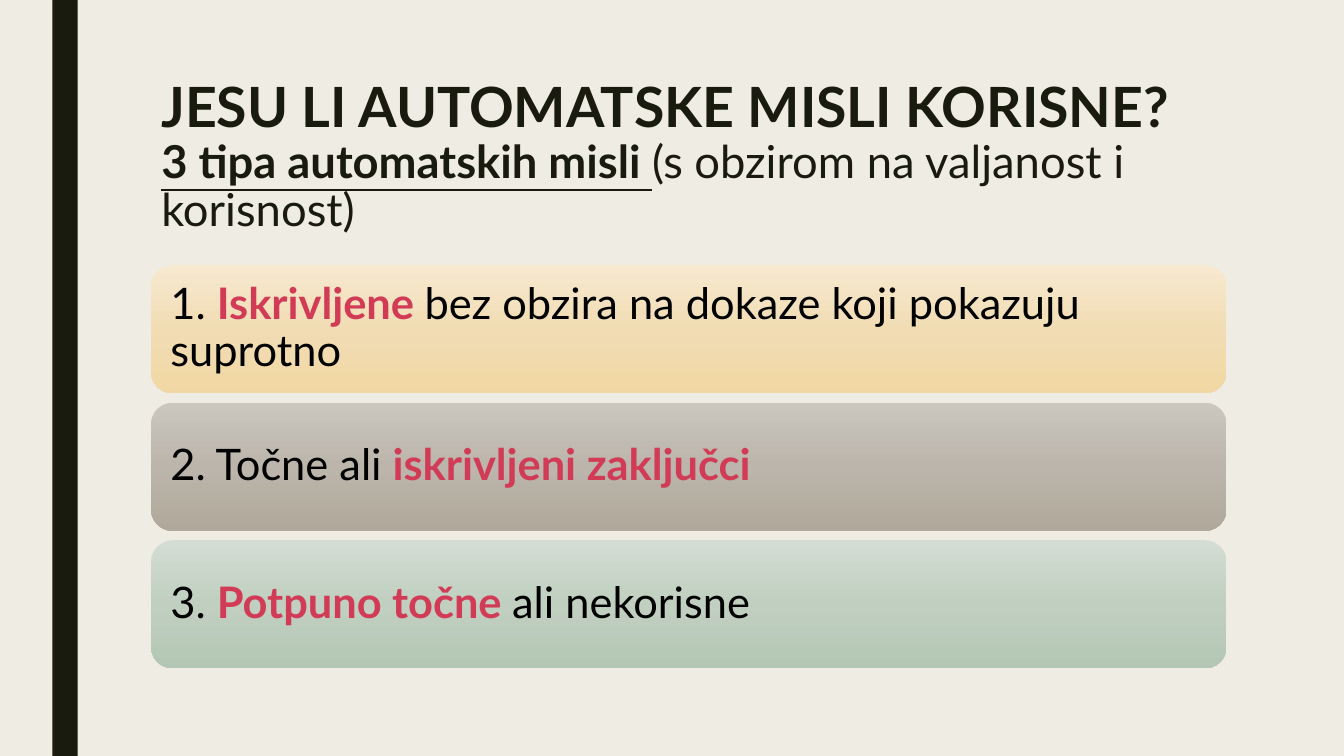
from copy import deepcopy

from pptx import Presentation
from pptx.dml.color import RGBColor
from pptx.enum import shapes, text
from pptx.util import Cm, Pt

FONT = "Lato"
BACKGROUND = RGBColor(0xEF, 0xED, 0xE3)
DARK = RGBColor(0x19, 0x1B, 0x0E)
BLACK = RGBColor(0x00, 0x00, 0x00)
ACCENT = RGBColor(0xD1, 0x3B, 0x56)

# Each thought type: gradient from top to bottom, then (wording, is emphasised).
THOUGHT_TYPES = [
    (("F7E9D0", "F1DCB4", "F1D7A3"),
     [("1. ", False), ("Iskrivljene ", True),
      ("bez obzira na dokaze koji pokazuju suprotno", False)]),
    (("CBC7BF", "BBB5AB", "B0A89A"),
     [("2. Točne ali ", False), ("iskrivljeni zaključci", True)]),
    (("D3DDD3", "C0CFC0", "B4C7B5"),
     [("3. ", False), ("Potpuno točne ", True), ("ali nekorisne", False)]),
]


def add_text(paragraph, wording, size, color=DARK, bold=False, underline=False):
    run = paragraph.add_run()
    run.text = wording
    font = run.font
    font.name, font.size, font.bold, font.underline = FONT, Pt(size), bold, underline
    font.color.rgb = color


def fill_gradient(shape, colors):
    """Fill from top to bottom with evenly spaced colours."""
    fill = shape.fill
    fill.gradient()
    fill.gradient_angle = 270
    stop_list = shape._element.xpath(".//a:gsLst")[0]
    for _ in range(len(colors) - len(stop_list)):
        stop_list.append(deepcopy(stop_list[0]))
    for i, (stop, color) in enumerate(zip(fill.gradient_stops, colors)):
        stop.position = i / (len(colors) - 1)
        stop.color.rgb = RGBColor.from_string(color)


def add_side_bar(slide, left, top, width, height):
    bar = slide.shapes.add_shape(shapes.MSO_SHAPE.RECTANGLE, left, top, width, height)
    bar.shadow.inherit = False
    bar.fill.solid()
    bar.fill.fore_color.rgb = DARK
    bar.line.fill.background()


def set_title(slide, left, top, width, height):
    title = slide.shapes.title
    title.left, title.top, title.width, title.height = left, top, width, height
    frame = title.text_frame
    frame.word_wrap = True
    frame.auto_size = text.MSO_AUTO_SIZE.NONE
    frame.vertical_anchor = text.MSO_ANCHOR.TOP
    heading = frame.paragraphs[0]
    heading.alignment = text.PP_ALIGN.LEFT
    heading.line_spacing = 0.89
    add_text(heading, "JESU LI AUTOMATSKE MISLI KORISNE?", 39.6, bold=True)
    heading.add_line_break()
    add_text(heading, "3 tipa automatskih misli ", 32.4, bold=True, underline=True)
    add_text(heading, "(s obzirom na valjanost i korisnost)", 32.4)


def add_thought_types(slide, left, top, width, height, gap=Cm(0.24)):
    """Stack one rounded card per thought type in the given box."""
    count = len(THOUGHT_TYPES)
    card_height = (height - gap * (count - 1)) // count
    for i, (colors, wording) in enumerate(THOUGHT_TYPES):
        card = slide.shapes.add_shape(
            shapes.MSO_SHAPE.ROUNDED_RECTANGLE,
            left, top + i * (card_height + gap), width, card_height)
        card.shadow.inherit = False
        card.line.fill.background()
        fill_gradient(card, colors)
        frame = card.text_frame
        frame.word_wrap = True
        frame.vertical_anchor = text.MSO_ANCHOR.MIDDLE
        frame.margin_left = frame.margin_right = Cm(0.33)
        frame.margin_top = frame.margin_bottom = Cm(0.33)
        description = frame.paragraphs[0]
        description.alignment = text.PP_ALIGN.LEFT
        description.line_spacing = 0.9
        for part, emphasised in wording:
            add_text(description, part, 31, ACCENT if emphasised else BLACK, emphasised)


def main():
    deck = Presentation()
    deck.slide_width, deck.slide_height = Cm(33.87), Cm(19.05)
    slide = deck.slides.add_slide(deck.slide_layouts[5])
    slide.background.fill.solid()
    slide.background.fill.fore_color.rgb = BACKGROUND
    add_side_bar(slide, Cm(1.32), 0, Cm(0.64), deck.slide_height)
    set_title(slide, Cm(3.81), Cm(1.9), Cm(26.67), Cm(4.11))
    add_thought_types(slide, Cm(3.81), Cm(6.68), Cm(27.1), Cm(10.16))
    deck.save("out.pptx")


if __name__ == "__main__":
    main()
